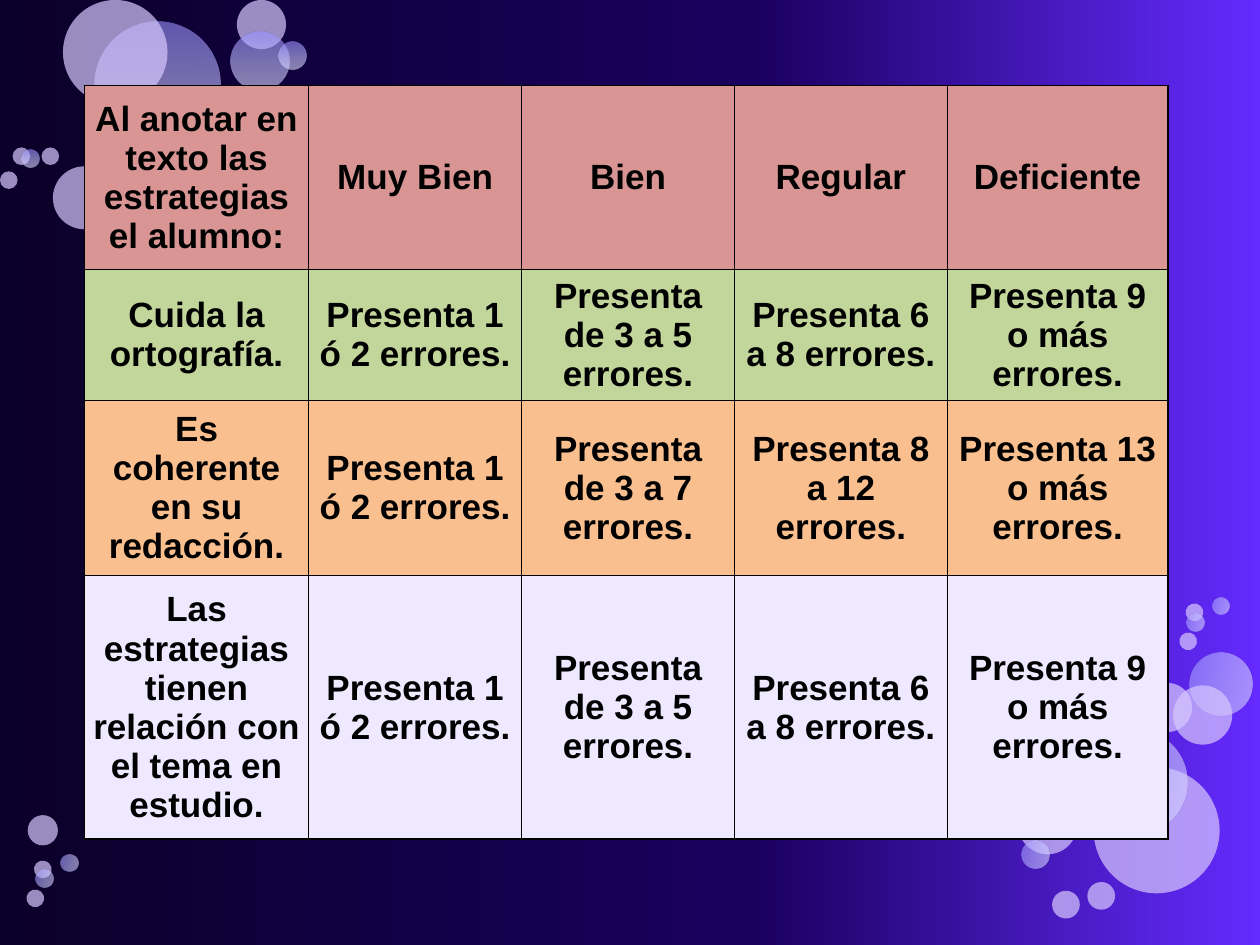
from lxml.etree import SubElement
from pptx import Presentation
from pptx.dml.color import RGBColor
from pptx.enum.shapes import MSO_SHAPE
from pptx.enum.text import MSO_ANCHOR, PP_ALIGN
from pptx.oxml.ns import qn
from pptx.util import Inches, Pt

COLORS = {
    "text": "000000", "border": "000000", "bubble": "D7C8FE",
    "header": "D99594", "spelling": "C2D69B", "coherence": "FABF8F", "relation": "EFE9FF",
}
BACKGROUND_STOPS = [(0, "0B0029"), (60, "1A005F"), (100, "652BFF")]
BUBBLE_STOPS = [(0, "9890FF"), (50, "BFBBFF"), (100, "E0DEFF")]
BUBBLE_TURN = 103.3

# Bubbles from back to front: left, top, diameter, style
UPPER_BUBBLES = [
    (0.75, 0.17, 1, "shaded"), (0.42, 1.32, 0.5, "plain"), (0.75, 1, 0.39, "shaded"),
    (0.71, 1.25, 0.47, "shaded"), (0.5, 0, 0.83, "plain"), (1.88, 0, 0.39, "plain"),
    (1.83, 0.25, 0.47, "shaded"), (2.21, 0.33, 0.22, "shaded"), (1.12, 1.67, 0.22, "plain"),
    (0.1, 1.17, 0.14, "plain"), (1, 1.92, 0.22, "plain"), (0, 1.36, 0.14, "plain"),
    (0.17, 1.19, 0.14, "shaded"), (0.33, 1.17, 0.14, "plain"),
]
LOWER_BUBBLES = [
    (8.68, 6.09, 1, "plain"), (9.44, 5.18, 0.5, "shaded"), (9.07, 5.42, 0.39, "plain"),
    (9.31, 5.44, 0.47, "plain"), (8.59, 5.79, 0.83, "shaded"), (0.22, 6.47, 0.24, "plain"),
    (8.08, 6.31, 0.47, "plain"), (8.11, 6.67, 0.22, "shaded"), (8.35, 7.07, 0.22, "plain"),
    (9.41, 4.79, 0.14, "plain"), (8.63, 7, 0.22, "plain"), (9.62, 4.74, 0.14, "shaded"),
    (9.42, 4.87, 0.14, "shaded"), (9.36, 5.02, 0.14, "plain"), (0.27, 6.83, 0.14, "plain"),
    (0.48, 6.78, 0.14, "shaded"), (0.28, 6.9, 0.14, "shaded"), (0.21, 7.06, 0.14, "plain"),
]

COL_WIDTHS = [1.78, 1.69, 1.69, 1.69, 1.75]
# Rubric rows: fill, height, texts
RUBRIC = [
    ("header", 1.46, ["Al anotar en texto las estrategias el alumno:",
                      "Muy Bien", "Bien", "Regular", "Deficiente"]),
    ("spelling", 1.04, ["Cuida la ortografía.", "Presenta 1 ó 2 errores.",
                        "Presenta de 3 a 5 errores.", "Presenta 6 a 8 errores.",
                        "Presenta 9 o más errores."]),
    ("coherence", 1.39, ["Es coherente en su redacción.", "Presenta 1 ó 2 errores.",
                         "Presenta de 3 a 7 errores.", "Presenta 8 a 12 errores.",
                         "Presenta 13 o más errores."]),
    ("relation", 2.09, ["Las estrategias tienen relación con el tema en estudio.",
                        "Presenta 1 ó 2 errores.", "Presenta de 3 a 5 errores.",
                        "Presenta 6 a 8 errores.", "Presenta 9 o más errores."]),
]
CELL_FORMAT = {
    "vertical_anchor": MSO_ANCHOR.MIDDLE,
    "margin_left": Inches(0.07), "margin_right": Inches(0.07),
    "margin_top": 0, "margin_bottom": 0,
}
PARAGRAPH_FORMAT = {
    "alignment": PP_ALIGN.CENTER, "space_before": Pt(4), "space_after": Pt(4),
}
FONT_FORMAT = {"name": "Arial", "size": Pt(20), "bold": True}


def set_format(obj, values):
    for name, value in values.items():
        setattr(obj, name, value)


def add_alpha(color, percent):
    SubElement(color, qn("a:alpha"), val=str(percent * 1000))


def set_gradient(fill, owner, stops, angle, opacity=100):
    """Fill with any number of stops; owner is the XML element that holds the fill."""
    fill.gradient()
    fill.gradient_angle = angle
    gs_lst = owner.find(".//" + qn("a:gsLst"))
    for gs in list(gs_lst):
        gs_lst.remove(gs)
    for position, value in stops:
        gs = SubElement(gs_lst, qn("a:gs"), pos=str(position * 1000))
        color = SubElement(gs, qn("a:srgbClr"), val=value)
        if opacity < 100:
            add_alpha(color, opacity)


def add_bubble(s, left, top, diameter, style, turned):
    sp = s.shapes.add_shape(MSO_SHAPE.OVAL, Inches(left), Inches(top),
                            Inches(diameter), Inches(diameter))
    sp.shadow.inherit = False
    sp.line.fill.background()
    if style == "shaded":
        set_gradient(sp.fill, sp.element, BUBBLE_STOPS, 270, opacity=60)
    else:
        sp.fill.solid()
        sp.fill.fore_color.rgb = RGBColor.from_string(COLORS["bubble"])
        add_alpha(sp.element.spPr.find(qn("a:solidFill"))[0], 70)
    if turned:
        sp.rotation = BUBBLE_TURN
        sp.element.spPr.find(qn("a:xfrm")).set("flipV", "1")


def add_borders(cell):
    tc_pr = cell._tc.get_or_add_tcPr()
    for side in ("L", "R", "T", "B"):
        ln = SubElement(tc_pr, qn(f"a:ln{side}"), w=str(Pt(1)))
        fill = SubElement(ln, qn("a:solidFill"))
        SubElement(fill, qn("a:srgbClr"), val=COLORS["border"])


def fill_cell(cell, text, color):
    add_borders(cell)
    cell.fill.solid()
    cell.fill.fore_color.rgb = RGBColor.from_string(color)
    set_format(cell, CELL_FORMAT)
    p = cell.text_frame.paragraphs[0]
    set_format(p, PARAGRAPH_FORMAT)
    r = p.add_run()
    r.text = text
    set_format(r.font, FONT_FORMAT)
    r.font.color.rgb = RGBColor.from_string(COLORS["text"])


def add_rubric(s, left, top):
    height = sum(row[1] for row in RUBRIC)
    table = s.shapes.add_table(len(RUBRIC), len(COL_WIDTHS), Inches(left), Inches(top),
                               Inches(sum(COL_WIDTHS)), Inches(height)).table
    for column, width in zip(table.columns, COL_WIDTHS):
        column.width = Inches(width)
    for row, (color, row_height, texts) in zip(table.rows, RUBRIC):
        row.height = Inches(row_height)
        for cell, text in zip(row.cells, texts):
            fill_cell(cell, text, COLORS[color])


def main():
    prs = Presentation()
    prs.slide_width, prs.slide_height = Inches(10), Inches(7.5)
    s = prs.slides.add_slide(prs.slide_layouts[6])
    set_gradient(s.background.fill, s.element, BACKGROUND_STOPS, 0)
    for bubbles, turned in ((UPPER_BUBBLES, False), (LOWER_BUBBLES, True)):
        for bubble in bubbles:
            add_bubble(s, *bubble, turned)
    add_rubric(s, 0.67, 0.68)
    prs.save("out.pptx")


if __name__ == "__main__":
    main()
